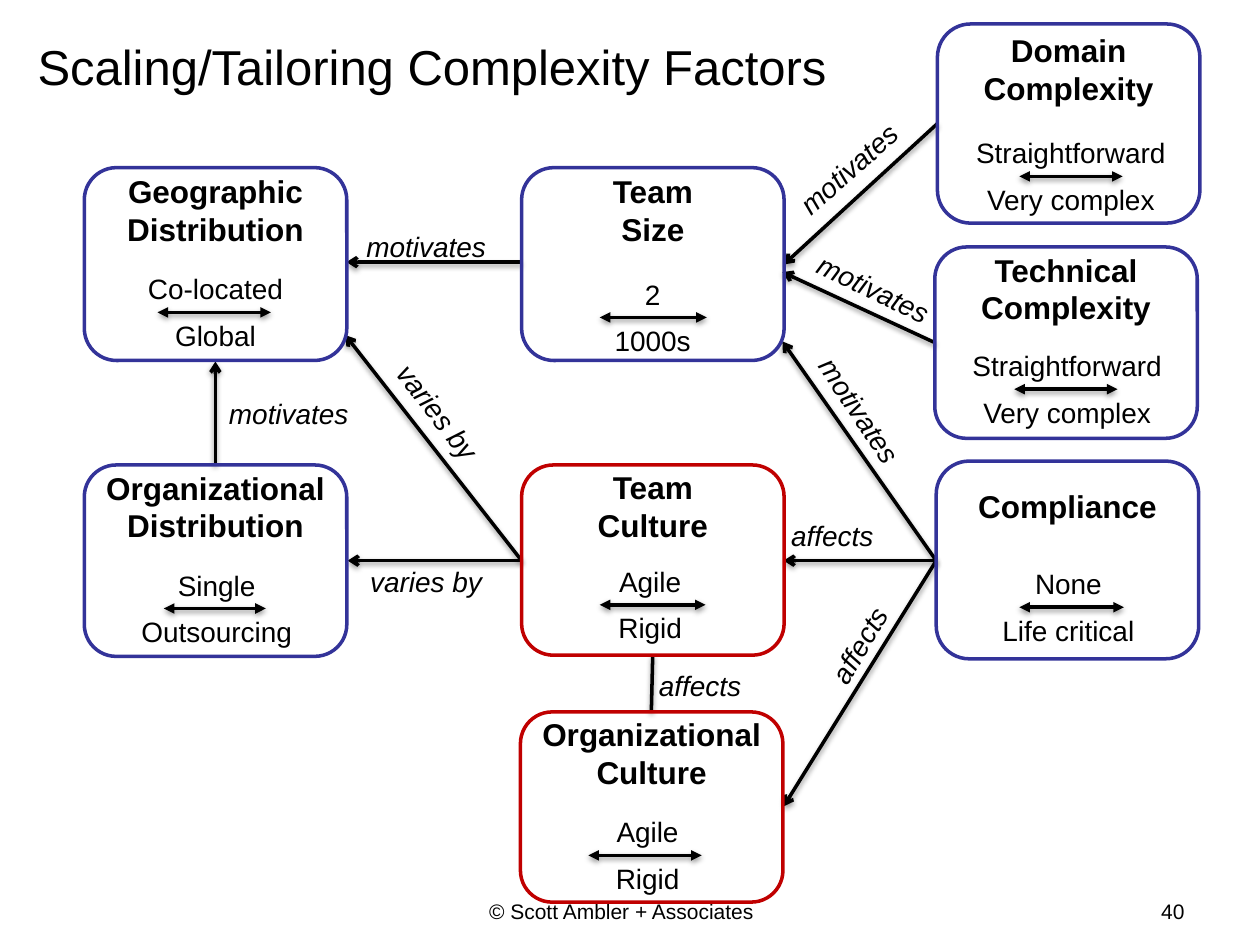
import dataclasses

import lxml.etree
import pptx
import pptx.dml.color
import pptx.enum.shapes
import pptx.enum.text
import pptx.oxml.ns
import pptx.util

Pt = pptx.util.Pt
ALIGN = pptx.enum.text.PP_ALIGN
ANCHOR = pptx.enum.text.MSO_ANCHOR


@dataclasses.dataclass(frozen=True)
class Theme:
    font: str = "Arial"
    ink: str = "000000"
    factor: str = "333399"
    culture: str = "C00000"
    title_size: int = 28
    heading_size: int = 18
    label_size: int = 16
    footer_size: int = 12
    line_width: float = 2


THEME = Theme()
LABEL_HEIGHT = 26.6
BOX_WIDTH = 150
BLANK_BELOW_HEADING = 62.1  # room for three heading lines

# Heading lines, colour, box (left, top, height), scale ends,
# scale label (left, top), scale arrow (left, right)
FACTORS = [
    (["Geographic", "Distribution"], THEME.factor, (48.2, 95.8, 110.2),
     ("Co-located", "Global"), (49, 151.9), (90, 154.8)),
    (["Organizational", "Distribution"], THEME.factor, (48.2, 265.7, 109.4),
     ("Single", "Outsourcing"), (49.7, 321.1), (93.6, 151.9)),
    (["Team", "Size"], THEME.factor, (298.1, 95.8, 110.2),
     ("2", "1000s"), (298.8, 154.8), (342.7, 403.9)),
    (["Domain Complexity"], THEME.factor, (535.7, 13.7, 113.8),
     ("Straightforward", "Very complex"), (537.8, 74.2), (582.5, 641.5)),
    (["Technical Complexity"], THEME.factor, (534.2, 141.1, 109.4),
     ("Straightforward", "Very complex"), (535.7, 195.8), (579.6, 638.6)),
    (["Compliance"], THEME.factor, (535, 263.5, 113),
     ("None", "Life critical"), (536.4, 320.4), (582.5, 642.2)),
    (["Team", "Culture"], THEME.culture, (298.1, 265.7, 108.7),
     ("Agile", "Rigid"), (297.4, 319), (342.7, 403.2)),
    (["Organizational", "Culture"], THEME.culture, (297.4, 406.8, 108.7),
     ("Agile", "Rigid"), (295.9, 462.2), (336.2, 401)),
]

# Start, end, arrowhead at the end, wording, label (left, top, width), rotation
COMPLIANCE_EDGE = (535, 320.4)
CULTURE_EDGE = (298.1, 320.4)
RELATIONS = [
    ((298.1, 149.8), (198, 149.8), "arrow", "motivates", (202.3, 127.4, 95.8), 0),
    ((534.2, 195.8), (447.1, 155.5), "arrow", "motivates", (457.9, 151.9, 83.5), 25.6),
    ((535.7, 70.6), (447.8, 151.2), "arrow", "motivates", (443.5, 82.8, 83.5), 318.4),
    ((123.1, 265.7), (123.1, 206.6), "arrow", "motivates", (123.8, 223.2, 83.5), 0),
    ((373, 374.4), (372.2, 406.8), None, "affects", (369.4, 378.7, 61.9), 0),
    (CULTURE_EDGE, (198.7, 320.4), "arrow", "varies by", (204.5, 319, 93.6), 0),
    (CULTURE_EDGE, (197.3, 191.5), "arrow", "varies by", (208.1, 228.2, 93.6), 52.3),
    (COMPLIANCE_EDGE, (447.1, 195.1), "arrow", "motivates", (448.6, 223.9, 88.6), 56.2),
    (COMPLIANCE_EDGE, (447.8, 320.4), "arrow", "affects", (445, 293, 61.9), 0),
    (COMPLIANCE_EDGE, (447.8, 460.8), "arrow", "affects", (460.1, 355, 61.9), 300.5),
]


def apply_format(target, values):
    for name, value in values.items():
        setattr(target, name, value)


def color(value):
    return pptx.dml.color.RGBColor.from_string(value)


def write_text(shape, lines, frame_format, font_format, align):
    frame = shape.text_frame
    apply_format(frame, {"word_wrap": True, **frame_format})
    for index, line in enumerate(lines):
        paragraph = frame.paragraphs[0] if index == 0 else frame.add_paragraph()
        paragraph.alignment = align
        run = paragraph.add_run()
        run.text = line
        apply_format(run.font, {"name": THEME.font, **font_format})
        run.font.color.rgb = color(THEME.ink)


def add_text(slide, text, place, size, align=ALIGN.LEFT, italic=False,
             rotation=0, anchor=ANCHOR.TOP):
    shape = slide.shapes.add_textbox(*map(Pt, place))
    shape.rotation = rotation
    frame_format = {"vertical_anchor": anchor}
    if align == ALIGN.LEFT:
        frame_format["margin_right"] = 0
    write_text(shape, [text], frame_format,
               {"size": Pt(size), "italic": italic}, align)


def add_line(slide, start, end, head=None, tail=None):
    connector = slide.shapes.add_connector(
        pptx.enum.shapes.MSO_CONNECTOR.STRAIGHT, *map(Pt, start + end))
    connector.line.width = Pt(THEME.line_width)
    connector.line.color.rgb = color(THEME.ink)
    # Arrowheads and soft shadow
    qn = pptx.oxml.ns.qn
    properties = connector.element.spPr
    outline = properties.find(qn("a:ln"))
    for tag, kind in (("a:headEnd", head), ("a:tailEnd", tail)):
        if kind:
            lxml.etree.SubElement(outline, qn(tag), type=kind)
    effects = lxml.etree.SubElement(properties, qn("a:effectLst"))
    shadow = lxml.etree.SubElement(
        effects, qn("a:outerShdw"), blurRad=str(Pt(3.1)), dist=str(Pt(1.6)),
        dir="5400000", rotWithShape="0")
    shade = lxml.etree.SubElement(shadow, qn("a:srgbClr"), val=THEME.ink)
    lxml.etree.SubElement(shade, qn("a:alpha"), val="38000")


def add_relation(slide, start, end, tail, wording, place, rotation):
    add_line(slide, start, end, tail=tail)
    add_text(slide, wording, (*place, LABEL_HEIGHT), THEME.label_size,
             italic=True, rotation=rotation)


def add_factor(slide, heading, outline, box, scale, label, arrow):
    left, top, height = box
    shape = slide.shapes.add_shape(
        pptx.enum.shapes.MSO_SHAPE.ROUNDED_RECTANGLE,
        *map(Pt, (left, top, BOX_WIDTH, height)))
    shape.shadow.inherit = False
    shape.fill.background()
    shape.line.color.rgb = color(outline)
    shape.line.width = Pt(THEME.line_width)
    write_text(shape, heading,
               {"vertical_anchor": ANCHOR.MIDDLE, "margin_left": 0,
                "margin_right": 0, "margin_top": 0,
                "margin_bottom": Pt(BLANK_BELOW_HEADING)},
               {"size": Pt(THEME.heading_size), "bold": True}, ALIGN.CENTER)
    # Scale: low end, double arrow, high end
    label_left, label_top = label
    middle = label_top + LABEL_HEIGHT
    for text, text_top in zip(scale, (label_top, middle)):
        add_text(slide, text, (label_left, text_top, 148.3, LABEL_HEIGHT),
                 THEME.label_size, ALIGN.CENTER)
    add_line(slide, (arrow[1], middle), (arrow[0], middle), "triangle", "triangle")


def main():
    presentation = pptx.Presentation()
    apply_format(presentation, {"slide_width": Pt(720), "slide_height": Pt(540)})
    slide = presentation.slides.add_slide(presentation.slide_layouts[6])

    # Title and footer
    add_text(slide, "Scaling/Tailoring Complexity Factors",
             (14.4, 15.1, 492.5, 44.6), THEME.title_size, anchor=ANCHOR.MIDDLE)
    add_text(slide, "© Scott Ambler + Associates", (77.8, 509.8, 360, 19.4),
             THEME.footer_size, ALIGN.RIGHT)
    add_text(slide, "40", (612, 509.8, 72, 19.4), THEME.footer_size, ALIGN.RIGHT)

    # Diagram
    for relation in RELATIONS:
        add_relation(slide, *relation)
    for factor in FACTORS:
        add_factor(slide, *factor)

    presentation.save("out.pptx")


if __name__ == "__main__":
    main()
